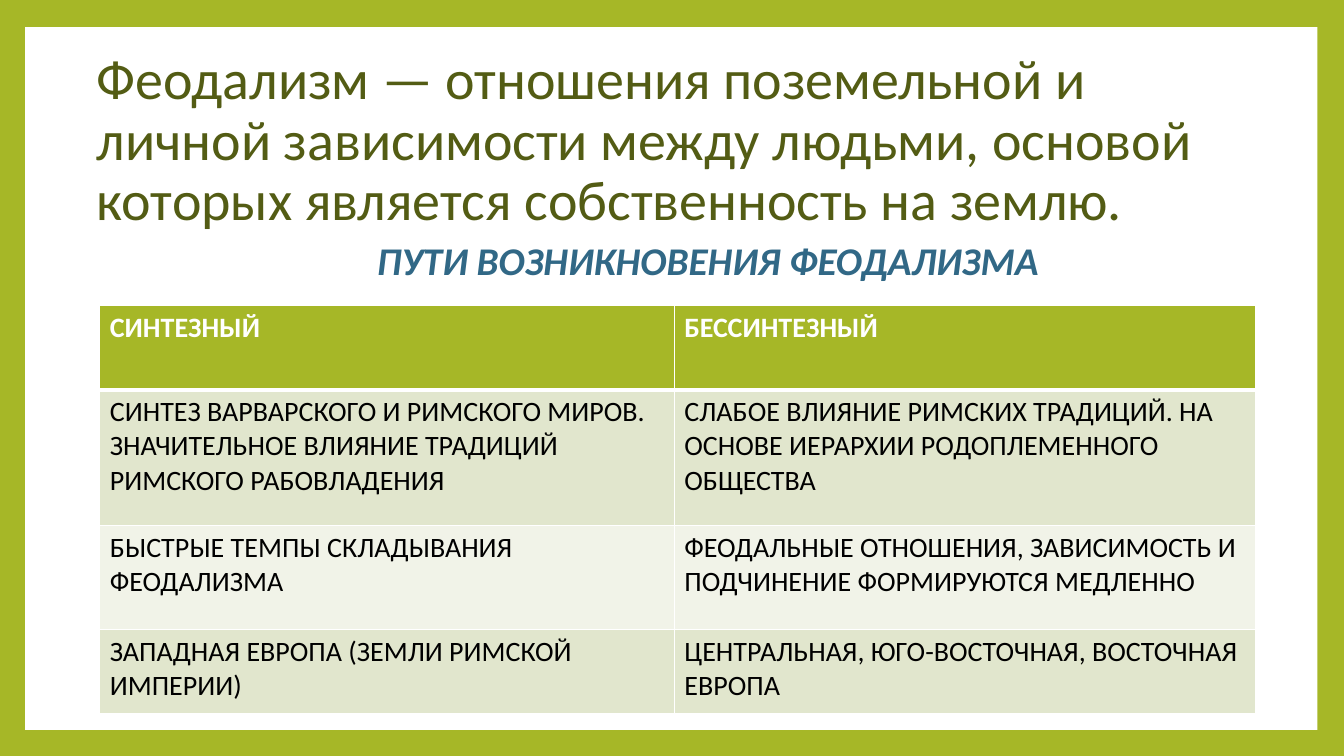
"""Build a slide on feudalism with a definition and a comparison table."""
from lxml import etree
from pptx import Presentation
from pptx.dml.color import RGBColor
from pptx.enum.shapes import MSO_SHAPE
from pptx.enum.text import MSO_ANCHOR, PP_ALIGN
from pptx.oxml.ns import qn
from pptx.util import Pt

RECTANGLE = MSO_SHAPE.RECTANGLE
TOP, MIDDLE = MSO_ANCHOR.TOP, MSO_ANCHOR.MIDDLE
LEFT, CENTER = PP_ALIGN.LEFT, PP_ALIGN.CENTER

GREEN = RGBColor(0xA6, 0xB7, 0x27)
OLIVE = RGBColor(0x53, 0x5C, 0x14)
BLUE = RGBColor(0x31, 0x68, 0x86)
WHITE = RGBColor(0xFF, 0xFF, 0xFF)
BLACK = RGBColor(0x00, 0x00, 0x00)
BAND_DARK = RGBColor(0xE1, 0xE6, 0xCD)
BAND_LIGHT = RGBColor(0xF1, 0xF3, 0xE8)

FONT = "Calibri"
DEFINITION = ("Феодализм — отношения поземельной и личной зависимости между людьми, "
              "основой которых является собственность на землю.")
COLUMN_WIDTHS = [410.4, 415.4]
ROW_HEIGHTS = [60.2, 97.2, 74.2, 60.2]
ROWS = [
    ("СИНТЕЗНЫЙ", "БЕССИНТЕЗНЫЙ"),
    ("СИНТЕЗ ВАРВАРСКОГО И РИМСКОГО МИРОВ.\n"
     "ЗНАЧИТЕЛЬНОЕ ВЛИЯНИЕ ТРАДИЦИЙ РИМСКОГО РАБОВЛАДЕНИЯ",
     "СЛАБОЕ ВЛИЯНИЕ РИМСКИХ ТРАДИЦИЙ. НА ОСНОВЕ ИЕРАРХИИ РОДОПЛЕМЕННОГО ОБЩЕСТВА"),
    ("БЫСТРЫЕ ТЕМПЫ СКЛАДЫВАНИЯ ФЕОДАЛИЗМА",
     "ФЕОДАЛЬНЫЕ ОТНОШЕНИЯ, ЗАВИСИМОСТЬ И ПОДЧИНЕНИЕ ФОРМИРУЮТСЯ МЕДЛЕННО"),
    ("ЗАПАДНАЯ ЕВРОПА (ЗЕМЛИ РИМСКОЙ ИМПЕРИИ)",
     "ЦЕНТРАЛЬНАЯ, ЮГО-ВОСТОЧНАЯ, ВОСТОЧНАЯ ЕВРОПА"),
]


def write_text(frame, text, *, size, color, bold=False, italic=False,
               align=LEFT, spacing=1.0):
    """Fill a text frame with formatted paragraphs, one per line of text."""
    frame.word_wrap = True
    frame.text = text
    for paragraph in frame.paragraphs:
        paragraph.alignment = align
        paragraph.line_spacing = spacing
        for run in paragraph.runs:
            run.font.name = FONT
            run.font.size = Pt(size)
            run.font.bold = bold
            run.font.italic = italic
            run.font.color.rgb = color


def add_text(slide, box, text, anchor=TOP, **text_format):
    """Add a text box at (left, top, width, height)."""
    shape = slide.shapes.add_textbox(*map(Pt, box))
    shape.text_frame.vertical_anchor = anchor
    write_text(shape.text_frame, text, **text_format)


def add_panel(slide, box, color):
    """Add a plain filled rectangle."""
    shape = slide.shapes.add_shape(RECTANGLE, *map(Pt, box))
    shape.shadow.inherit = False
    shape.fill.solid()
    shape.fill.fore_color.rgb = color
    shape.line.fill.background()


def set_borders(cell, color, **widths):
    """Draw cell borders, with a width in points for each side."""
    properties = cell._tc.get_or_add_tcPr()
    for side, width in widths.items():
        line = etree.SubElement(properties, qn(f"a:ln{side}"), w=str(Pt(width)))
        fill = etree.SubElement(line, qn("a:solidFill"))
        etree.SubElement(fill, qn("a:srgbClr"), val=str(color))


def add_paths_table(slide, left, top):
    """Add the table that compares the two paths to feudalism."""
    frame = slide.shapes.add_table(
        len(ROWS), len(COLUMN_WIDTHS), Pt(left), Pt(top),
        Pt(sum(COLUMN_WIDTHS)), Pt(sum(ROW_HEIGHTS)))
    table = frame.table
    for column, width in zip(table.columns, COLUMN_WIDTHS):
        column.width = Pt(width)
    for index, texts in enumerate(ROWS):
        table.rows[index].height = Pt(ROW_HEIGHTS[index])
        header = index == 0
        band = BAND_DARK if index % 2 else BAND_LIGHT
        for cell, text in zip(table.rows[index].cells, texts):
            set_borders(cell, WHITE, L=1, R=1,
                        T=3 if index == 1 else 1, B=3 if header else 1)
            cell.fill.solid()
            cell.fill.fore_color.rgb = GREEN if header else band
            write_text(cell.text_frame, text, size=20, bold=header,
                       color=WHITE if header else BLACK)


def main():
    """Build and save the slide."""
    presentation = Presentation()
    presentation.slide_width, presentation.slide_height = Pt(960), Pt(540)
    slide = presentation.slides.add_slide(presentation.slide_layouts[6])
    slide.background.fill.solid()
    slide.background.fill.fore_color.rgb = GREEN
    add_panel(slide, (18, 19.4, 923, 502), WHITE)
    add_text(slide, (62, 48.2, 834.5, 106.6), DEFINITION, MIDDLE,
             size=40, color=OLIVE, spacing=0.9)
    add_paths_table(slide, 71.3, 218.2)
    add_text(slide, (233.3, 165.6, 544.3, 41), "ПУТИ ВОЗНИКНОВЕНИЯ ФЕОДАЛИЗМА",
             size=28, color=BLUE, bold=True, italic=True, align=CENTER)
    presentation.save("out.pptx")


if __name__ == "__main__":
    main()
